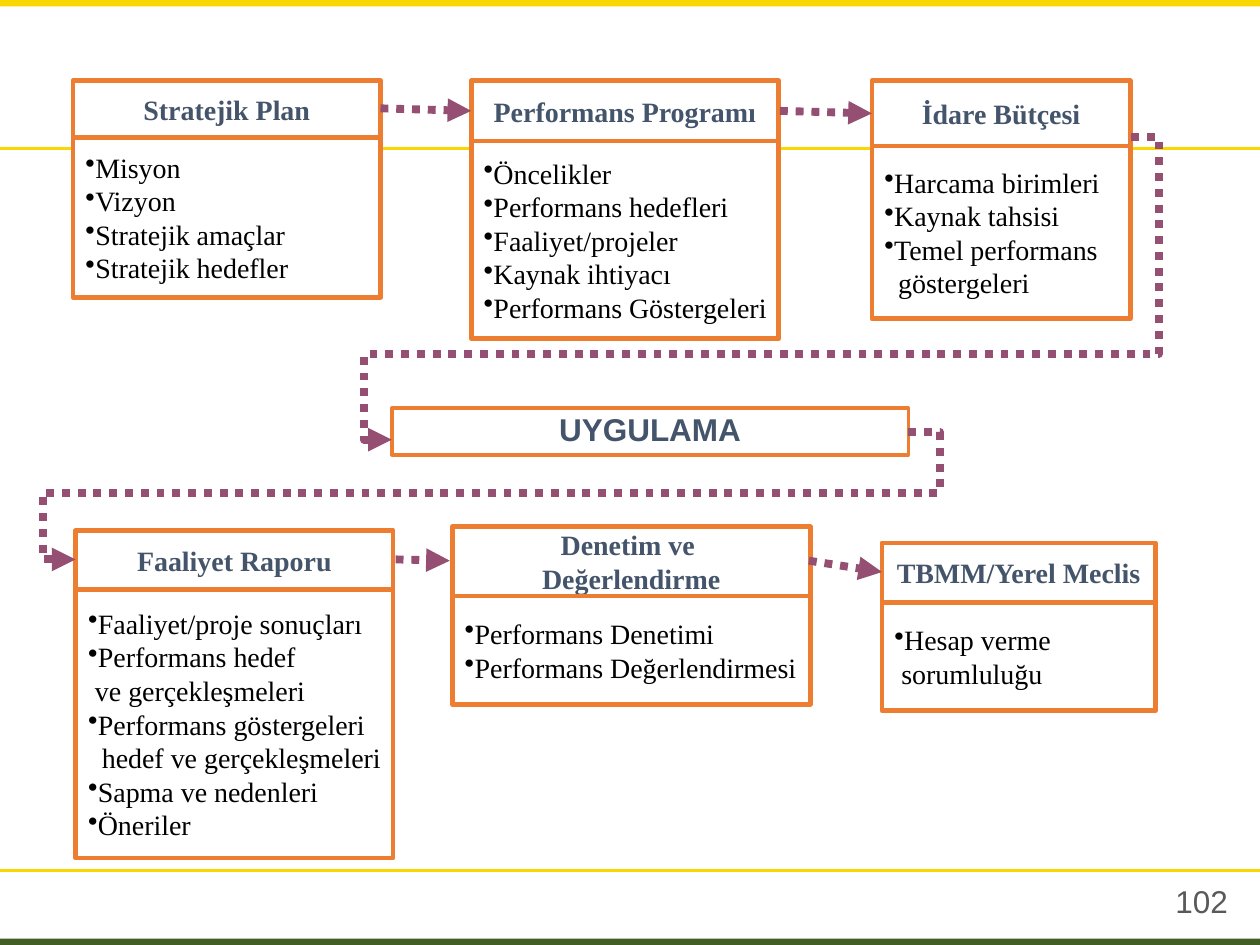
from lxml.etree import SubElement
from pptx import Presentation
from pptx.dml.color import RGBColor
from pptx.enum.dml import MSO_LINE
from pptx.enum.shapes import MSO_CONNECTOR, MSO_SHAPE
from pptx.enum.text import MSO_ANCHOR, PP_ALIGN
from pptx.oxml.ns import qn
from pptx.util import Inches, Pt

YELLOW = RGBColor(0xF9, 0xD7, 0x02)
GREEN = RGBColor(0x43, 0x5E, 0x23)
ORANGE = RGBColor(0xED, 0x7D, 0x31)
PURPLE = RGBColor(0x95, 0x4F, 0x72)
SLATE = RGBColor(0x44, 0x54, 0x6A)
GRAY = RGBColor(0x59, 0x59, 0x59)
BLACK = RGBColor(0, 0, 0)
WHITE = RGBColor(255, 255, 255)

WIDTH, HEIGHT = 10, 7.5
BAND = 0.05
RULES = [1.18, 6.91]
INDENT = 0.055

HEAD = {"name": "Times New Roman", "size": Pt(16), "bold": True}
BODY = {"name": "Times New Roman", "size": Pt(16), "bold": False}
STAGE = {"name": "Arial", "size": Pt(18), "bold": True}
NUMBER = {"name": "Arial", "size": Pt(18), "bold": False}

# Each body item is (text, level): level 0 has a bullet, others are indented continuations.
CARDS = [
    ((3.74, 0.64, 2.44), (0.48, 1.57), ["Performans Programı"],
     [("Öncelikler", 0), ("Performans hedefleri", 0), ("Faaliyet/projeler", 0),
      ("Kaynak ihtiyacı", 0), ("Performans Göstergeleri", 0)]),
    ((0.58, 0.64, 2.44), (0.45, 1.27), ["Stratejik Plan"],
     [("Misyon", 0), ("Vizyon", 0), ("Stratejik amaçlar", 0), ("Stratejik hedefler", 0)]),
    ((6.92, 0.64, 2.05), (0.52, 1.37), ["İdare Bütçesi"],
     [("Harcama birimleri", 0), ("Kaynak tahsisi", 0), ("Temel performans", 0),
      ("göstergeleri", 2)]),
    ((0.6, 4.21, 2.52), (0.47, 2.13), ["Faaliyet Raporu"],
     [("Faaliyet/proje sonuçları", 0), ("Performans hedef", 0), ("ve gerçekleşmeleri", 1),
      ("Performans göstergeleri", 0), ("hedef ve gerçekleşmeleri", 2),
      ("Sapma ve nedenleri", 0), ("Öneriler", 0)]),
    ((3.59, 4.18, 2.84), (0.55, 0.86), ["Denetim ve ", "Değerlendirme"],
     [("Performans Denetimi", 0), ("Performans Değerlendirmesi", 0)]),
    ((7, 4.31, 2.17), (0.47, 0.86), ["TBMM/Yerel Meclis"],
     [("Hesap verme", 0), ("sorumluluğu", 1)]),
]

ARROWS = [
    ((3.02, 0.86), (3.74, 0.88)),
    ((6.19, 0.88), (6.92, 0.9)),
    ((3.14, 4.44), (3.57, 4.45)),
    ((6.42, 4.45), (7, 4.54)),
]
BENT_ARROWS = [
    ((8.98, 1.09), (3.11, 3.49), (9.2, 2.81, 2.89)),
    ((7.21, 3.43), (0.6, 4.44), (7.46, 3.91, 0.34)),
]


def add_box(shapes, at, fill, line=None, weight=0):
    sp = shapes.add_shape(MSO_SHAPE.RECTANGLE, *map(Inches, at))
    sp.shadow.inherit = False
    sp.fill.solid()
    sp.fill.fore_color.rgb = fill
    if line is None:
        sp.line.fill.background()
    else:
        sp.line.color.rgb = line
        sp.line.width = Pt(weight)
    return sp


def write(sp, items, style, color, align, wrap=False, bullets=False):
    tf = sp.text_frame
    tf.word_wrap = wrap
    tf.vertical_anchor = MSO_ANCHOR.MIDDLE
    for i, (text, level) in enumerate(items):
        p = tf.paragraphs[0] if i == 0 else tf.add_paragraph()
        p.alignment = align
        if bullets:
            pPr = p._p.get_or_add_pPr()
            pPr.set("marL", str(Inches(INDENT * level)))
            pPr.set("indent", "0")
            if level == 0:
                SubElement(pPr, qn("a:buChar"), char="•")
        r = p.add_run()
        r.text = text
        for key, value in style.items():
            setattr(r.font, key, value)
        r.font.color.rgb = color
    return tf


def add_line(shapes, start, end, color, weight, kind=MSO_CONNECTOR.STRAIGHT):
    cx = shapes.add_connector(kind, *map(Inches, start + end))
    cx.line.color.rgb = color
    cx.line.width = Pt(weight)
    SubElement(cx._element.spPr, qn("a:effectLst"))
    return cx


def add_arrow(shapes, start, end, bends=None):
    kind = MSO_CONNECTOR.ELBOW if bends else MSO_CONNECTOR.STRAIGHT
    cx = add_line(shapes, start, end, PURPLE, 4.5, kind)
    cx.line.dash_style = MSO_LINE.ROUND_DOT
    SubElement(cx.line._get_or_add_ln(), qn("a:tailEnd"), type="triangle")
    if bends:
        (x1, y1), (x2, y2) = start, end
        right, middle, left = bends
        shares = [(right - x1) / (x2 - x1), (middle - y1) / (y2 - y1), (left - x1) / (x2 - x1)]
        geom = cx._element.spPr.find(qn("a:prstGeom"))
        geom.set("prst", "bentConnector5")
        av = geom.find(qn("a:avLst"))
        for n, share in enumerate(shares, 1):
            SubElement(av, qn("a:gd"), name=f"adj{n}", fmla=f"val {round(share * 100000)}")


def main():
    prs = Presentation()
    prs.slide_width, prs.slide_height = Inches(WIDTH), Inches(HEIGHT)
    shapes = prs.slides.add_slide(prs.slide_layouts[6]).shapes

    add_box(shapes, (0, 0, WIDTH, BAND), YELLOW)
    add_box(shapes, (0, HEIGHT - BAND, WIDTH, BAND), GREEN)
    for y in RULES:
        add_line(shapes, (0, y), (WIDTH, y), YELLOW, 1.5)
    number = shapes.add_textbox(*map(Inches, (9.23, 6.95, 0.78, 0.4)))
    write(number, [("102", 0)], NUMBER, GRAY, PP_ALIGN.LEFT, wrap=True)

    for (x, y, w), (head_h, body_h), title, items in CARDS:
        head = add_box(shapes, (x, y, w, head_h), WHITE, ORANGE, 2.75)
        write(head, [(t, 0) for t in title], HEAD, SLATE, PP_ALIGN.CENTER)
        body = add_box(shapes, (x, y + head_h, w, body_h), WHITE, ORANGE, 2.75)
        write(body, items, BODY, BLACK, PP_ALIGN.LEFT, bullets=True)

    stage = add_box(shapes, (3.11, 3.24, 4.1, 0.37), WHITE, ORANGE, 2)
    tf = write(stage, [("UYGULAMA", 0)], STAGE, SLATE, PP_ALIGN.CENTER, wrap=True)
    tf.vertical_anchor = MSO_ANCHOR.TOP
    tf.paragraphs[0].line_spacing = 0.9

    for start, end in ARROWS:
        add_arrow(shapes, start, end)
    for start, end, bends in BENT_ARROWS:
        add_arrow(shapes, start, end, bends)

    prs.save("out.pptx")


if __name__ == "__main__":
    main()
